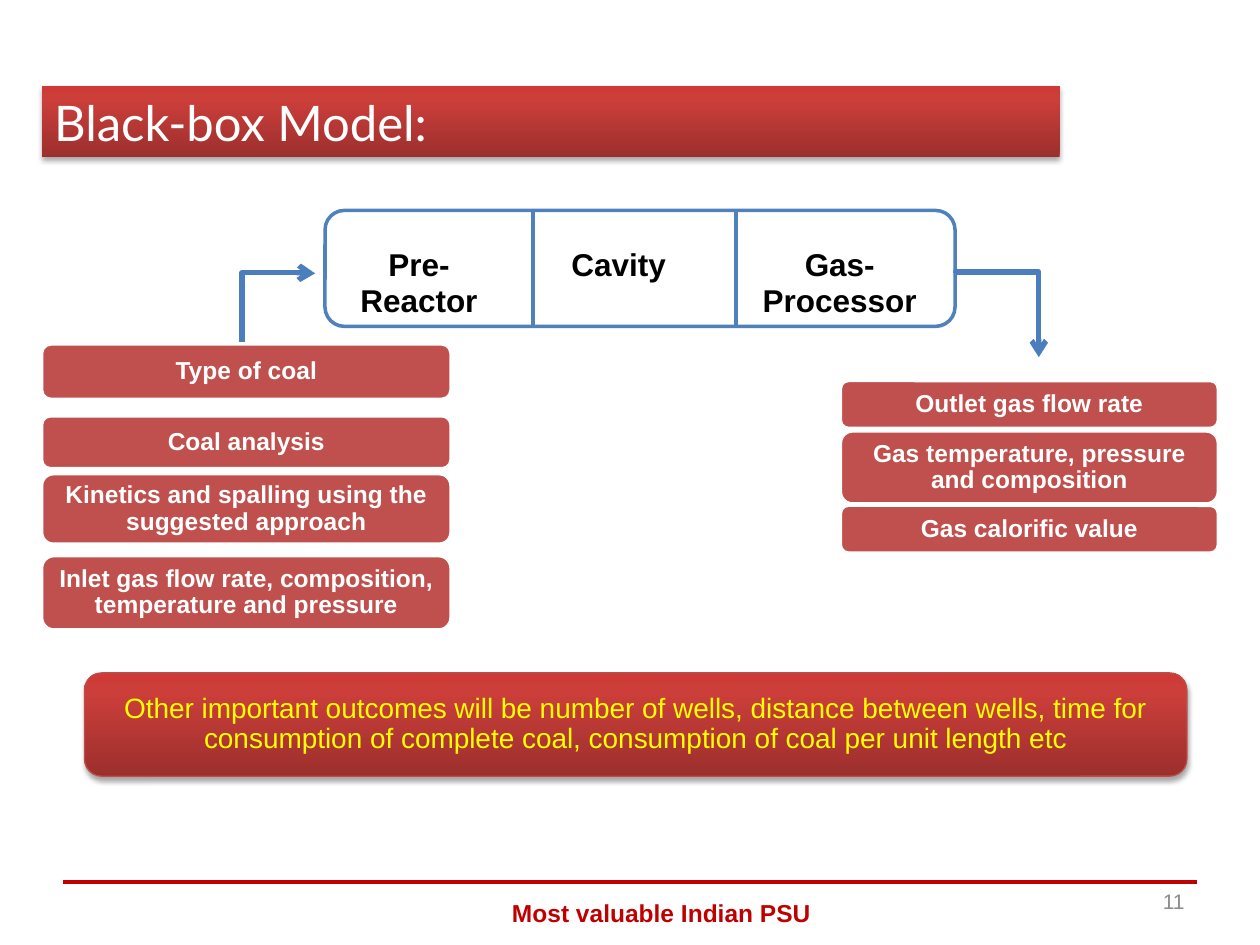
from copy import deepcopy
from dataclasses import dataclass

from pptx import Presentation
from pptx.dml.color import RGBColor
from pptx.enum.shapes import MSO_CONNECTOR as Link, MSO_SHAPE as Preset
from pptx.enum.text import MSO_ANCHOR as Anchor, MSO_AUTO_SIZE as AutoSize, PP_ALIGN as Align
from pptx.oxml import parse_xml
from pptx.oxml.ns import nsdecls, qn
from pptx.util import Inches, Pt


@dataclass(frozen=True)
class Theme:
    body_font: str = "Arial"
    title_font: str = "Lato"
    title_size: int = 28
    stage_size: int = 18
    banner_size: int = 16
    card_size: int = 14
    number_size: int = 12
    white: str = "FFFFFF"
    black: str = "000000"
    blue: str = "4F81BD"
    arrow: str = "4B7EBC"
    card: str = "C0504D"
    banner_edge: str = "BF4C48"
    banner_text: str = "FFFF00"
    footer: str = "C00000"
    number: str = "8C8C8C"
    gradient: tuple = ((0, "9C2F2D"), (0.8, "CB3E3A"), (1, "CE3B37"))


THEME = Theme()

# Content: text, with places in inches
TITLE = "Black-box Model:"
STAGES = [("Pre-Reactor", 1.49), ("Cavity", 1.68), ("Gas-Processor", 1.83)]
DIVIDERS = [4.23, 5.84]
CARD_COLUMNS = [  # left, width, [(text, top, height)]
    (0.33, 3.25, [
        ("Type of coal", 2.73, 0.44),
        ("Coal analysis", 3.3, 0.42),
        ("Kinetics and spalling using the suggested approach", 3.76, 0.56),
        ("Inlet gas flow rate, composition, temperature and pressure", 4.41, 0.59),
    ]),
    (6.67, 3, [
        ("Outlet gas flow rate", 3.02, 0.38),
        ("Gas temperature, pressure and composition", 3.42, 0.58),
        ("Gas calorific value", 4.01, 0.38),
    ]),
]
ARROWS = [  # begin x, begin y, end x, end y before turning, rotation, bend position
    (2.5, 2.75, 1.92, 2.17, 90, 1.01),
    (8.25, 2.17, 7.58, 2.83, 270, -0.01),
]
BANNER = ("Other important outcomes will be number of wells, distance between wells, "
          "time for consumption of complete coal, consumption of coal per unit length etc")
FOOTER = "Most valuable Indian PSU"
PAGE_NUMBER = "11"

BOX_LEFT, BOX_TOP, BOX_WIDTH, BOX_HEIGHT = 2.58, 1.67, 5, 0.92
NO_TABLE_STYLE = "{2D5ABB26-0587-4C30-8999-92F81FD0307C}"


def rgb(code):
    return RGBColor.from_string(code)


def write(frame, text, size, color, bold=False, align=Align.CENTER,
          font=THEME.body_font, spacing=None):
    frame.text = text
    para = frame.paragraphs[0]
    para.alignment = align
    para.line_spacing = spacing
    para.font.name, para.font.size, para.font.bold = font, Pt(size), bold
    para.font.color.rgb = rgb(color)


def add_block(page, preset, left, top, width, height, fill, edge, weight):
    shape = page.shapes.add_shape(preset, *map(Inches, (left, top, width, height)))
    shape.shadow.inherit = False
    shape.fill.solid()
    shape.fill.fore_color.rgb = rgb(fill)
    shape.line.color.rgb = rgb(edge)
    shape.line.width = Pt(weight)
    return shape


def fill_block(shape, text, size, color, margin, bold=False):
    frame = shape.text_frame
    frame.word_wrap = True
    frame.vertical_anchor = Anchor.MIDDLE
    frame.margin_left = frame.margin_right = Inches(margin)
    frame.margin_top = frame.margin_bottom = Inches(margin)
    write(frame, text, size, color, bold, spacing=0.9)


def add_text(page, left, top, width, height, anchor, *args, **options):
    frame = page.shapes.add_textbox(*map(Inches, (left, top, width, height))).text_frame
    frame.word_wrap = True
    frame.vertical_anchor = anchor
    write(frame, *args, **options)


def add_line(page, kind, x1, y1, x2, y2, color, weight):
    line = page.shapes.add_connector(kind, *map(Inches, (x1, y1, x2, y2)))
    line.line.color.rgb = rgb(color)
    line.line.width = Pt(weight)
    line._element.spPr.append(parse_xml(f"<a:effectLst {nsdecls('a')}/>"))
    return line


def add_gloss(shape):
    """Red gradient, dark at the bottom, with a soft shadow below."""
    shape.fill.gradient()
    shape.fill.gradient_angle = 90
    stop_list = shape._element.spPr.find(".//" + qn("a:gsLst"))
    stop_list.append(deepcopy(stop_list[-1]))
    for stop, (position, color) in zip(shape.fill.gradient_stops, THEME.gradient):
        stop.position = position
        stop.color.rgb = rgb(color)
    shape.shadow.inherit = False
    shape._element.spPr.find(qn("a:effectLst")).append(parse_xml(
        f'<a:outerShdw {nsdecls("a")} blurRad="{Pt(3.1)}" dist="{Pt(1.8)}" dir="5400000" '
        'rotWithShape="0"><a:srgbClr val="000000"><a:alpha val="35000"/></a:srgbClr>'
        '</a:outerShdw>'))


def add_title(page):
    title = page.shapes.title
    title.left, title.top, title.width, title.height = map(Inches, (0.33, 0.68, 8.08, 0.57))
    title.line.fill.background()
    add_gloss(title)
    title.text_frame.auto_size = AutoSize.NONE
    title.text_frame.vertical_anchor = Anchor.MIDDLE
    write(title.text_frame, TITLE, THEME.title_size, THEME.white,
          align=Align.LEFT, font=THEME.title_font)


def add_stages(page):
    add_block(page, Preset.ROUNDED_RECTANGLE, BOX_LEFT, BOX_TOP, BOX_WIDTH, BOX_HEIGHT,
              THEME.white, THEME.blue, 2)
    for x in DIVIDERS:
        add_line(page, Link.STRAIGHT, x, BOX_TOP, x, BOX_TOP + BOX_HEIGHT, THEME.blue, 2)
    holder = page.shapes.add_table(1, len(STAGES), *map(
        Inches, (BOX_LEFT, BOX_TOP + 0.25, BOX_WIDTH, 0.67)))
    table = holder.table
    table.first_row = table.horz_banding = False
    table._tbl.tblPr.find(qn("a:tableStyleId")).text = NO_TABLE_STYLE
    for index, (name, width) in enumerate(STAGES):
        table.columns[index].width = Inches(width)
        cell = table.cell(0, index)
        cell.fill.background()
        write(cell.text_frame, name, THEME.stage_size, THEME.black, bold=True)


def add_arrow(page, x1, y1, x2, y2, rotation, bend):
    arrow = add_line(page, Link.ELBOW, x1, y1, x2, y2, THEME.arrow, 3)
    properties = arrow._element.spPr
    properties.find(qn("a:xfrm")).set("rot", str(rotation * 60000))
    geometry = properties.find(qn("a:prstGeom"))
    for old in list(geometry):
        geometry.remove(old)
    geometry.append(parse_xml(
        f'<a:avLst {nsdecls("a")}><a:gd name="adj1" fmla="val {round(bend * 100000)}"/></a:avLst>'))
    properties.find(qn("a:ln")).append(parse_xml(f'<a:tailEnd {nsdecls("a")} type="arrow"/>'))


def main():
    deck = Presentation()
    deck.slide_width, deck.slide_height = Inches(10), Inches(7.5)
    page = deck.slides.add_slide(deck.slide_layouts[5])

    # Footer rule, title and process box
    add_line(page, Link.STRAIGHT, 0.5, 7, 9.5, 7, THEME.footer, 2.25)
    add_title(page)
    add_stages(page)

    # Inputs on the left, outputs on the right
    for arrow in ARROWS:
        add_arrow(page, *arrow)
    for left, width, cards in CARD_COLUMNS:
        for text, top, height in cards:
            card = add_block(page, Preset.ROUNDED_RECTANGLE, left, top, width, height,
                             THEME.card, THEME.white, 2)
            fill_block(card, text, THEME.card_size, THEME.white, 0.06, bold=True)

    # Outcome banner
    banner = add_block(page, Preset.ROUNDED_RECTANGLE, 0.67, 5.34, 8.75, 0.82,
                       THEME.card, THEME.banner_edge, 0.75)
    add_gloss(banner)
    fill_block(banner, BANNER, THEME.banner_size, THEME.banner_text, 0.07)

    # Page number and footer
    add_text(page, 7.17, 6.95, 2.33, 0.4, Anchor.MIDDLE, PAGE_NUMBER,
             THEME.number_size, THEME.number, align=Align.RIGHT)
    add_text(page, 3.5, 7.08, 3.5, 0.34, Anchor.TOP, FOOTER,
             THEME.card_size, THEME.footer, bold=True)
    deck.save("out.pptx")


if __name__ == "__main__":
    main()
